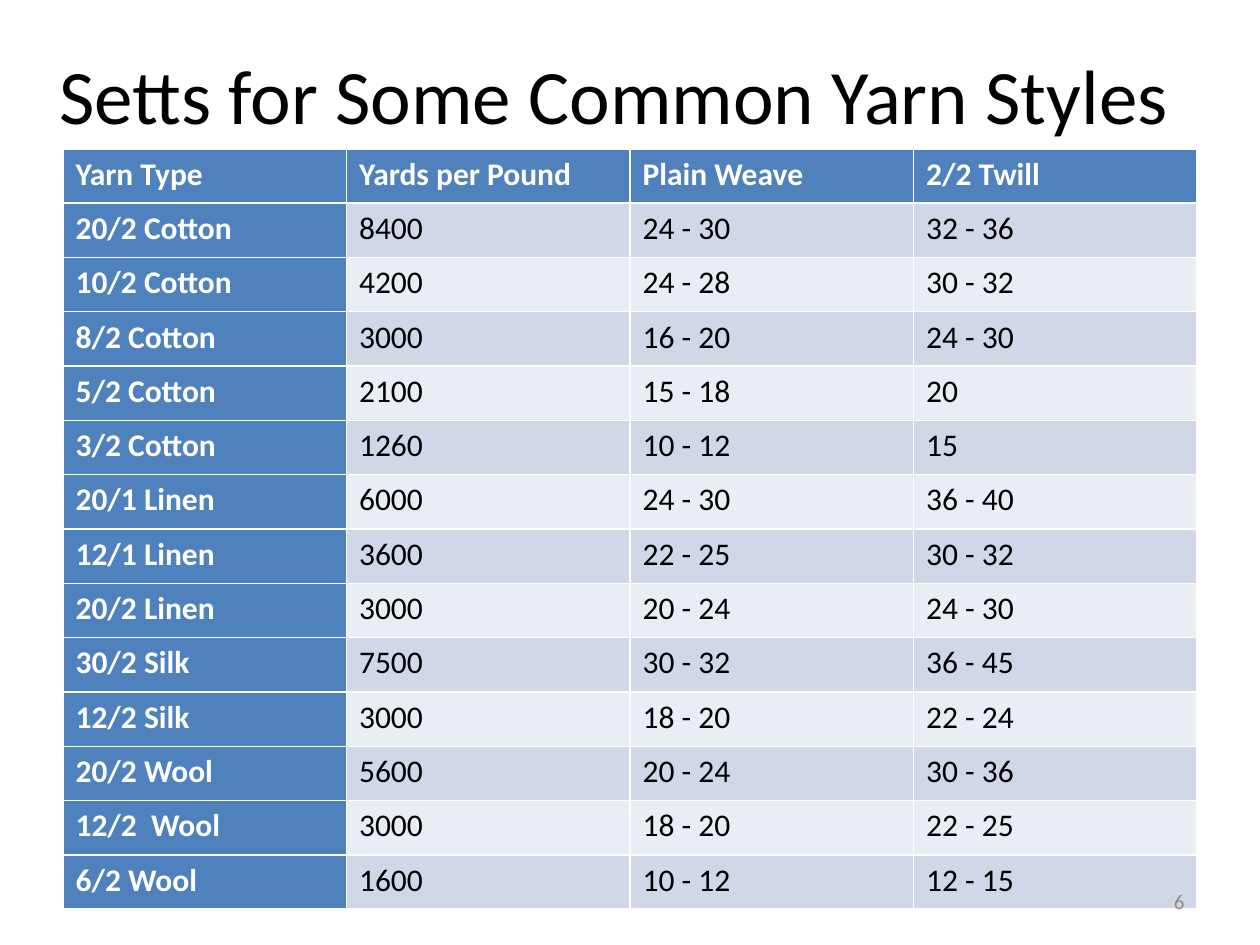
from dataclasses import dataclass

from pptx import Presentation
from pptx.dml.color import RGBColor
from pptx.enum import text
from pptx.util import Pt


@dataclass(frozen=True)
class Theme:
    font: str = "Calibri"
    title_size: int = 44
    table_size: int = 18
    number_size: int = 12
    ink: str = "000000"
    muted: str = "8C8C8C"
    heading_ink: str = "FFFFFF"
    heading_fill: str = "4F81BD"
    bands: tuple = ("D0D8E8", "E9EDF4")


@dataclass(frozen=True)
class Box:
    left: float
    top: float
    width: float
    height: float

    def lengths(self):
        return [Pt(v) for v in (self.left, self.top, self.width, self.height)]


THEME = Theme()

HEADINGS = ("Yarn Type", "Yards per Pound", "Plain Weave", "2/2 Twill")
SETTS = (
    ("20/2 Cotton", "8400", "24 - 30", "32 - 36"),
    ("10/2 Cotton", "4200", "24 - 28", "30 - 32"),
    ("8/2 Cotton", "3000", "16 - 20", "24 - 30"),
    ("5/2 Cotton", "2100", "15 - 18", "20"),
    ("3/2 Cotton", "1260", "10 - 12", "15"),
    ("20/1 Linen", "6000", "24 - 30", "36 - 40"),
    ("12/1 Linen", "3600", "22 - 25", "30 - 32"),
    ("20/2 Linen", "3000", "20 - 24", "24 - 30"),
    ("30/2 Silk", "7500", "30 - 32", "36 - 45"),
    ("12/2 Silk", "3000", "18 - 20", "22 - 24"),
    ("20/2 Wool", "5600", "20 - 24", "30 - 36"),
    ("12/2  Wool", "3000", "18 - 20", "22 - 25"),
    ("6/2 Wool", "1600", "10 - 12", "12 - 15"),
)


def write(frame, words, size, color, bold=False, align=None):
    frame.text = words
    paragraph = frame.paragraphs[0]
    paragraph.alignment = align
    paragraph.font.name = THEME.font
    paragraph.font.size = Pt(size)
    paragraph.font.bold = bold
    paragraph.font.color.rgb = RGBColor.from_string(color)


def place_title(slide, box, words):
    title = slide.shapes.title
    title.left, title.top, title.width, title.height = box.lengths()
    title.text_frame.vertical_anchor = text.MSO_ANCHOR.MIDDLE
    write(title.text_frame, words, THEME.title_size, THEME.ink,
          align=text.PP_ALIGN.CENTER)


def place_setts(slide, box, headings, setts):
    rows = (headings, *setts)
    table = slide.shapes.add_table(len(rows), len(headings), *box.lengths()).table
    table.first_col = True
    for column in table.columns:
        column.width = Pt(box.width / len(headings))
    for r, values in enumerate(rows):
        table.rows[r].height = Pt(box.height / len(rows))
        for c, value in enumerate(values):
            cell = table.cell(r, c)
            heading = r == 0 or c == 0
            fill = THEME.heading_fill if heading else THEME.bands[(r - 1) % 2]
            cell.fill.solid()
            cell.fill.fore_color.rgb = RGBColor.from_string(fill)
            write(cell.text_frame, value, THEME.table_size,
                  THEME.heading_ink if heading else THEME.ink, bold=heading)


def place_page_number(slide, box, number):
    frame = slide.shapes.add_textbox(*box.lengths()).text_frame
    frame.word_wrap = True
    frame.vertical_anchor = text.MSO_ANCHOR.MIDDLE
    write(frame, number, THEME.number_size, THEME.muted,
          align=text.PP_ALIGN.RIGHT)


def main():
    deck = Presentation()
    deck.slide_width, deck.slide_height = Pt(720), Pt(540)
    slide = deck.slides.add_slide(deck.slide_layouts[5])
    place_title(slide, Box(18, 21.6, 666, 63.4),
                "Setts for Some Common Yarn Styles")
    place_setts(slide, Box(36, 85, 648, 434.9), HEADINGS, SETTS)
    place_page_number(slide, Box(516, 500.5, 168, 28.8), "6")
    deck.save("out.pptx")


if __name__ == "__main__":
    main()
